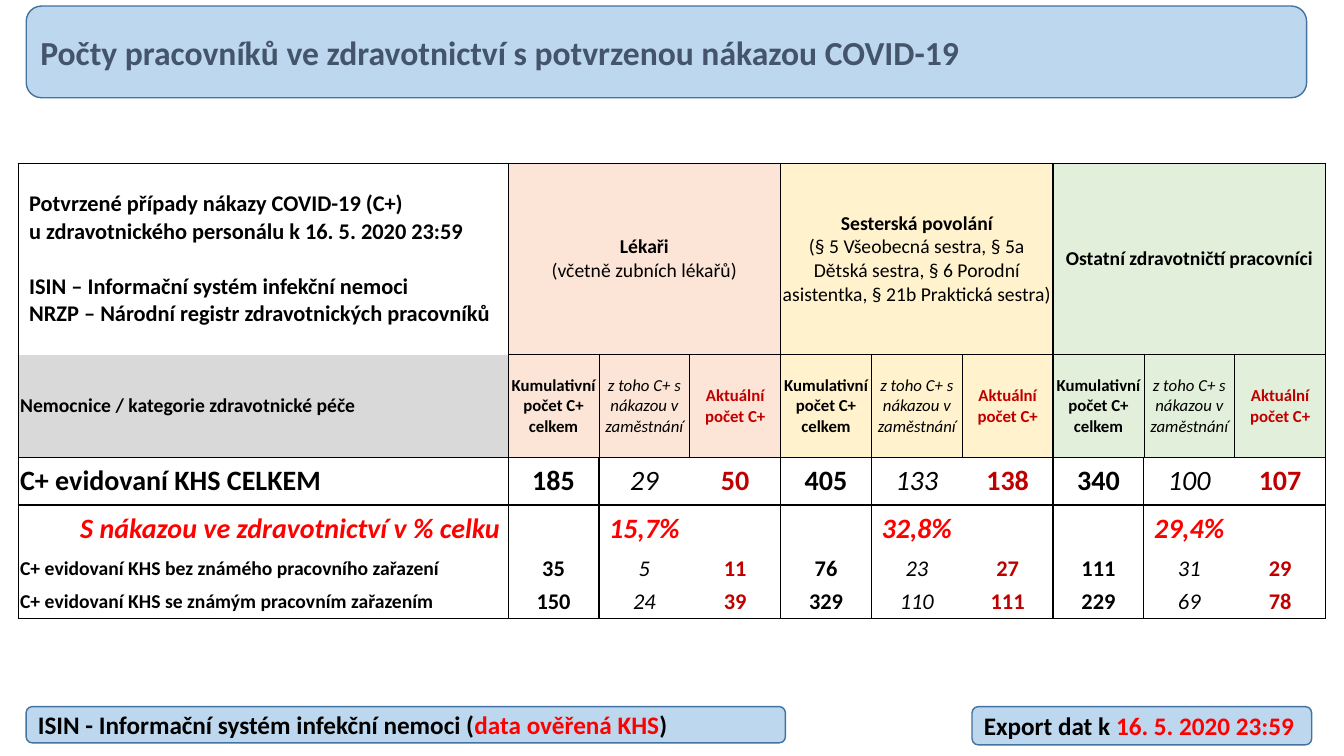
"""Build the slide on health workers with confirmed COVID-19."""
from dataclasses import dataclass
from lxml.etree import SubElement
from pptx import Presentation
from pptx.dml.color import RGBColor
from pptx.enum.shapes import MSO_SHAPE
from pptx.enum.text import MSO_ANCHOR, MSO_AUTO_SIZE, PP_ALIGN
from pptx.oxml.ns import qn
from pptx.util import Inches, Pt


@dataclass
class Theme:
    font: str = "Calibri"
    black: str = "000000"
    red: str = "FF0000"
    dark: str = "C00000"
    slate: str = "44546A"
    box: str = "BDD7EE"
    edge: str = "43739E"
    grey: str = "D9D9D9"
    tints: tuple = ("FCE4D6", "FFF2CC", "E2EFDA")
    title: int = 24
    foot: int = 18
    intro: int = 16
    group: int = 14
    head: int = 12
    label: tuple = (20, 20, 14, 14)
    value: tuple = (20, 20, 16, 16)


def ink(run, size, color, bold=True, italic=False):
    font = run.font
    font.name, font.size = theme.font, Pt(size)
    font.bold, font.italic = bold, italic
    font.color.rgb = RGBColor.from_string(color)


def rule(cell, side, width):
    line = SubElement(cell._tc.get_or_add_tcPr(), qn("a:ln" + side), w=str(Pt(width)))
    fill = SubElement(line, qn("a:solidFill"))
    SubElement(fill, qn("a:srgbClr"), val=theme.black)


theme = Theme()
deck = Presentation()
deck.slide_width, deck.slide_height = Inches(13.33), Inches(7.5)
wide, high = deck.slide_width / 100, deck.slide_height / 100
slide = deck.slides.add_slide(deck.slide_layouts[5])
shapes = slide.shapes

boxes = [
    ((1.95, 93.47, 56.49, 4.8), [
        ("ISIN - Informační systém infekční nemoci (", theme.black),
        ("data ověřená KHS", theme.red), (")", theme.black)]),
    ((1.95, 0.8, 95.27, 12.13), []),
    ((72.32, 93.47, 25.28, 5.07), [
        ("Export dat k ", theme.black), ("16. 5. 2020 23:59", theme.red)]),
]
for (left, top, width, height), parts in boxes:
    area = [int(left * wide), int(top * high), int(width * wide), int(height * high)]
    box = shapes.add_shape(MSO_SHAPE.ROUNDED_RECTANGLE, *area)
    box.shadow.inherit = False
    box.fill.solid()
    box.fill.fore_color.rgb = RGBColor.from_string(theme.box)
    box.line.color.rgb = RGBColor.from_string(theme.edge)
    box.line.width = Pt(1)
    frame = box.text_frame
    frame.word_wrap, frame.vertical_anchor = True, MSO_ANCHOR.MIDDLE
    par = frame.paragraphs[0]
    par.alignment = PP_ALIGN.LEFT
    for text, color in parts:
        run = par.add_run()
        run.text = text
        ink(run, theme.foot, color)
    if not parts:
        title = shapes.title
        title.left, title.top, title.width, title.height = area

shapes._spTree.append(title._element)
frame = title.text_frame
frame.text = "Počty pracovníků ve zdravotnictví s potvrzenou nákazou COVID-19"
frame.auto_size, frame.vertical_anchor = MSO_AUTO_SIZE.NONE, MSO_ANCHOR.MIDDLE
frame.margin_left = Inches(0.14)
frame.paragraphs[0].alignment = PP_ALIGN.LEFT
ink(frame.paragraphs[0].runs[0], theme.title, theme.slate)

intro = "\n".join([
    "Potvrzené případy nákazy COVID-19 (C+)",
    "u zdravotnického personálu k 16. 5. 2020 23:59",
    "ISIN – Informační systém infekční nemoci",
    "NRZP – Národní registr zdravotnických pracovníků"])
groups = [
    "Lékaři\n(včetně zubních lékařů)",
    "Sesterská povolání\n(§ 5 Všeobecná sestra, § 5a Dětská sestra, "
    "§ 6 Porodní asistentka, § 21b Praktická sestra)",
    "Ostatní zdravotničtí pracovníci"]
heads = ["Kumulativní počet C+ celkem", "z toho C+ s nákazou v zaměstnání", "Aktuální počet C+"]
rows = [
    [intro] + [text for name in groups for text in (name, "", "")],
    ["Nemocnice / kategorie zdravotnické péče"] + heads * 3,
    ["C+ evidovaní KHS CELKEM", "185", "29", "50", "405", "133", "138", "340", "100", "107"],
    ["S nákazou ve zdravotnictví v % celku",
     "", "15,7%", "", "", "32,8%", "", "", "29,4%", ""],
    ["C+ evidovaní KHS bez známého pracovního zařazení",
     "35", "5", "11", "76", "23", "27", "111", "31", "29"],
    ["C+ evidovaní KHS se známým pracovním zařazením",
     "150", "24", "39", "329", "110", "111", "229", "69", "78"],
]
tall = [25.33, 13.6, 6.27, 6.27, 4.4, 4.4]
span = [36.46] + [6.76] * 9
grid = shapes.add_table(
    len(rows), len(span), int(1.35 * wide), int(21.6 * high),
    int(sum(span) * wide), int(sum(tall) * high))
table = grid.table
table.first_row = table.horz_banding = False
table._tbl.tblPr.find(qn("a:tableStyleId")).text = "{2D5ABB26-0587-4C30-8999-92F81FD0307C}"
for col, share in zip(table.columns, span):
    col.width = int(share * wide)
for row, share in zip(table.rows, tall):
    row.height = int(share * high)
for c in (1, 4, 7):
    table.cell(0, c).merge(table.cell(0, c + 2))

for r, texts in enumerate(rows):
    for c, text in enumerate(texts):
        cell = table.cell(r, c)
        kind = (c - 1) % 3
        first = c == 0
        sides = {
            "L": 1 if first or kind == 0 else 0.5 if r == 1 else 0,
            "R": 1 if first or kind == 2 or r == 0 else 0.5 if r == 1 else 0,
            "T": 1 if r in (0, 2) else 0.5 if r == 1 and not first else 0,
            "B": 1 if r in (1, 5) else 0.5 if r == 0 and not first else 0}
        for side, width in sides.items():
            if width:
                rule(cell, side, width)
        tint = theme.grey if first else theme.tints[(c - 1) // 3]
        if r == 1 or r == 0 and not first:
            cell.fill.solid()
            cell.fill.fore_color.rgb = RGBColor.from_string(tint)
        else:
            cell.fill.background()
        cell.vertical_anchor = MSO_ANCHOR.MIDDLE
        cell.margin_left = Inches(0.11 if first and r == 0 else 0.02)
        cell.margin_right = Inches(0.08 if first and r == 3 else 0.02)
        cell.margin_top = cell.margin_bottom = 0
        if not text:
            continue
        cell.text_frame.text = text
        if r == 0:
            size = theme.intro if first else theme.group
        elif r == 1:
            size = theme.group if first else theme.head
        else:
            size = (theme.label if first else theme.value)[r - 2]
        color = theme.red if r == 3 else theme.dark if kind == 2 and not first else theme.black
        slant = r == 3 or r > 0 and kind == 1
        for n, par in enumerate(cell.text_frame.paragraphs):
            par.alignment = PP_ALIGN.CENTER
            if first:
                par.alignment = PP_ALIGN.RIGHT if r == 3 else PP_ALIGN.LEFT
                par.space_before = Pt(19.5 if n == 2 else 0)
            bold = r == 3 or not slant and (first or n == 0)
            ink(par.runs[0], size, color, bold, slant)

deck.save("out.pptx")
